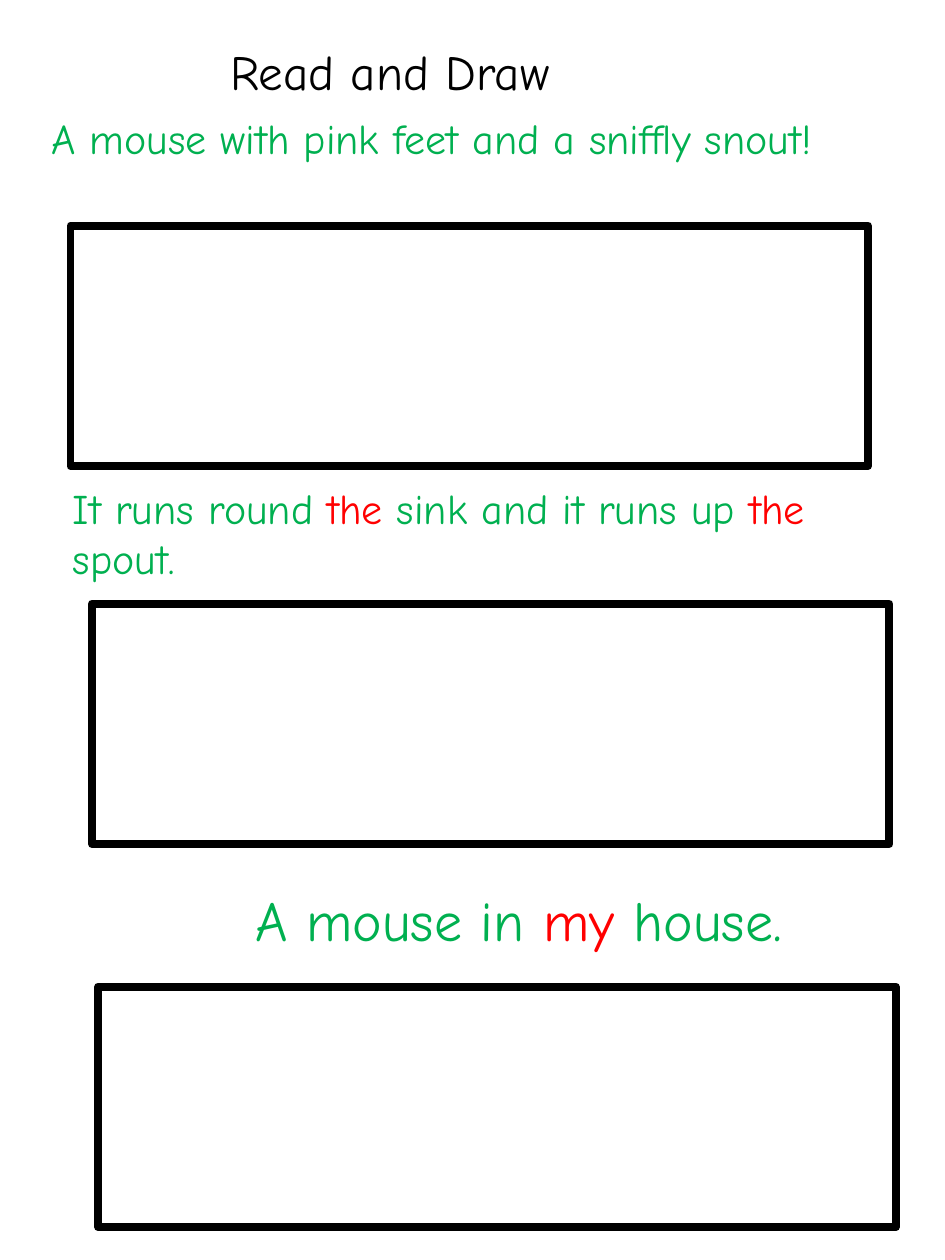
from pptx import Presentation
from pptx.dml.color import RGBColor
from pptx.enum.shapes import MSO_SHAPE
from pptx.enum.text import MSO_AUTO_SIZE, PP_ALIGN
from pptx.util import Inches, Pt

COLOURS = {"black": "000000", "white": "FFFFFF", "green": "00B050", "red": "FF0000"}


def colour(name):
    return RGBColor.from_string(COLOURS[name])


class Worksheet:
    font = "Comic Neue"
    frame_size = (Inches(6.33), Inches(1.91))
    frame_line = Pt(4.5)

    def __init__(self, page):
        self.page = page

    def drawing_frame(self, left, top):
        frame = self.page.shapes.add_shape(
            MSO_SHAPE.RECTANGLE, Inches(left), Inches(top), *self.frame_size)
        frame.shadow.inherit = False
        frame.fill.solid()
        frame.fill.fore_color.rgb = colour("white")
        frame.line.color.rgb = colour("black")
        frame.line.width = self.frame_line

    def sentence(self, place, size, spans, align=PP_ALIGN.LEFT, wrap=True):
        """Write one paragraph from (text, colour name) spans."""
        box = self.page.shapes.add_textbox(*map(Inches, place))
        box.text_frame.word_wrap = wrap
        box.text_frame.auto_size = MSO_AUTO_SIZE.SHAPE_TO_FIT_TEXT
        paragraph = box.text_frame.paragraphs[0]
        paragraph.alignment = align
        for text, name in spans:
            span = paragraph.add_run()
            span.text = text
            span.font.name = self.font
            span.font.size = Pt(size)
            span.font.color.rgb = colour(name)


def main():
    deck = Presentation()
    deck.slide_width, deck.slide_height = Inches(7.5), Inches(10)
    sheet = Worksheet(deck.slides.add_slide(deck.slide_layouts[6]))

    for left, top in ((0.56, 1.79), (0.73, 4.79), (0.78, 7.83)):
        sheet.drawing_frame(left, top)

    sheet.sentence((1.73, 0.28, 2.91, 0.57), 28, [("Read and Draw", "black")], wrap=False)
    sheet.sentence((0.31, 0.84, 6.83, 0.91), 24,
                   [("A mouse with pink feet and a sniffly snout!", "green")])
    sheet.sentence((0.48, 3.78, 6.83, 0.91), 24,
                   [("It runs round ", "green"), ("the", "red"),
                    (" sink and it runs up ", "green"), ("the", "red"),
                    (" spout.", "green")])
    sheet.sentence((0.17, 6.98, 7.89, 0.64), 32,
                   [("A mouse in ", "green"), ("my", "red"), (" house.", "green")],
                   align=PP_ALIGN.CENTER)

    deck.save("out.pptx")


if __name__ == "__main__":
    main()
